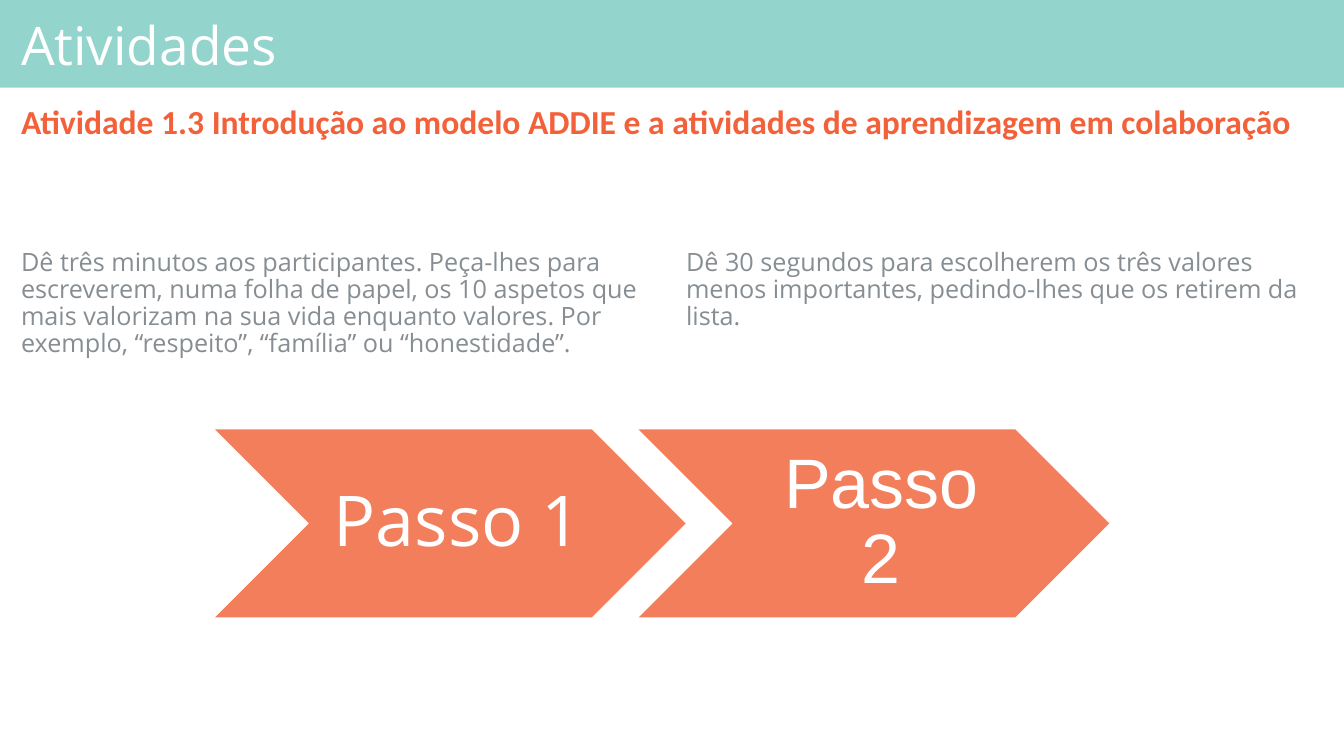
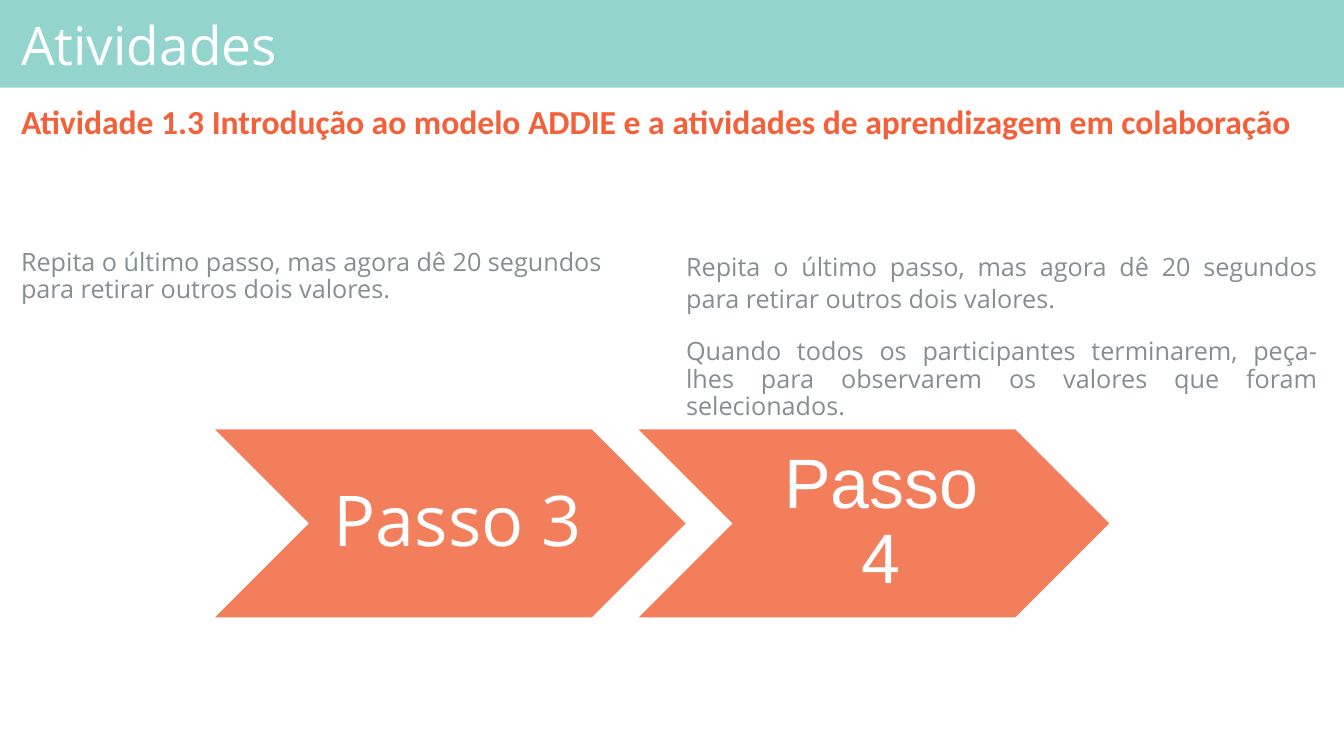
from pptx import Presentation
from pptx.dml.color import RGBColor
from pptx.enum import shapes, text
from pptx.oxml.ns import qn
from pptx.util import Cm, Pt

COLORS = {"band": "93D4CC", "heading": "F2613A", "body": "868E93",
          "step": "F27E5C", "white": "FFFFFF"}
LEFT, JUSTIFY, CENTER = text.PP_ALIGN.LEFT, text.PP_ALIGN.JUSTIFY, text.PP_ALIGN.CENTER

TITLE = "Atividades"
HEADING = "Atividade 1.3 Introdução ao modelo ADDIE e a atividades de aprendizagem em colaboração"
REPEAT = "Repita o último passo, mas agora dê 20 segundos para retirar outros dois valores."

# Per page: two columns of (text, alignment, line spacing, space before), then step labels
PAGES = [
    ([[("Dê três minutos aos participantes. Peça-lhes para escreverem, numa folha de papel, "
        "os 10 aspetos que mais valorizam na sua vida enquanto valores. Por exemplo, "
        "“respeito”, “família” ou “honestidade”.", LEFT, 0.9, 0)],
      [("Dê 30 segundos para escolherem os três valores menos importantes, pedindo-lhes que "
        "os retirem da lista.", LEFT, 0.9, 0)]],
     ["Passo 1", "Passo 2"]),
    ([[(REPEAT, LEFT, 0.9, 0)],
      [(REPEAT, JUSTIFY, 1.07, 0),
       ("Quando todos os participantes terminarem, peça-lhes para observarem os valores que "
        "foram selecionados.", JUSTIFY, 0.9, 18)]],
     ["Passo 3", "Passo 4"]),
]


def fill_shape(shape, color):
    shape.shadow.inherit = False
    shape.fill.solid()
    shape.fill.fore_color.rgb = RGBColor.from_string(COLORS[color])
    shape.line.fill.background()


def write(box, paragraphs, font, size, color, anchor, insets, bold=False):
    frame = box.text_frame
    frame.word_wrap = True
    frame.auto_size = text.MSO_AUTO_SIZE.NONE
    frame.vertical_anchor = anchor
    frame.margin_left, frame.margin_top, frame.margin_right, frame.margin_bottom = map(Cm, insets)
    for index, (words, align, spacing, before) in enumerate(paragraphs):
        para = frame.paragraphs[0] if index == 0 else frame.add_paragraph()
        para.alignment = align
        para.line_spacing = spacing
        para.space_before = Pt(before)
        properties = para._p.get_or_add_pPr()
        properties.set("marL", "0")
        properties.set("indent", "0")
        properties.append(properties.makeelement(qn("a:buNone"), {}))
        span = para.add_run()
        span.text = words
        span.font.name = font
        span.font.size = Pt(size)
        span.font.bold = bold
        span.font.color.rgb = RGBColor.from_string(COLORS[color])


deck = Presentation()
deck.slide_width, deck.slide_height = Cm(33.87), Cm(19.05)

# Shared layout: title, heading and two columns
layout = deck.slide_layouts.get_by_name("Comparison")
places = {0: (0.28, 0.23, 33.17, 1.98), 1: (0.28, 2.36, 33.17, 1.52),
          2: (0.28, 6.15, 16.41, 12.67), 4: (17.04, 6.15, 16.41, 12.67)}
for holder in list(layout.placeholders):
    place = places.get(holder.placeholder_format.idx)
    if place:
        holder.left, holder.top, holder.width, holder.height = map(Cm, place)
    else:
        layout.shapes.element.remove(holder.element)

pages = [deck.slides.add_slide(layout) for _ in PAGES]

# Title band, moved behind everything on the layout
band = pages[0].shapes.add_shape(shapes.MSO_SHAPE.RECTANGLE, 0, 0, deck.slide_width, Cm(2.21))
fill_shape(band, "band")
layout.shapes.element.insert(2, band.element)

STEP_WIDTH, STEP_HEIGHT = 11.86, 4.74
STEP_FONTS = ["Open Sans", "Arial"]
BODY_INSETS = (0.25, 0.13, 0.25, 0.13)
TOP, MIDDLE = text.MSO_ANCHOR.TOP, text.MSO_ANCHOR.MIDDLE

for page, (columns, steps) in zip(pages, PAGES):
    # Title and heading
    holders = {holder.placeholder_format.idx: holder for holder in page.placeholders}
    write(holders[0], [(TITLE, LEFT, 0.9, 0)], "Open Sans", 38, "white", MIDDLE,
          (0.25, 0.15, 0.15, 0.15))
    write(holders[1], [(HEADING, JUSTIFY, 0.9, 0)], "Calibri", 24, "heading", MIDDLE,
          BODY_INSETS, bold=True)

    # Instructions
    for idx, column in zip((2, 4), columns):
        write(holders[idx], column, "Open Sans", 18, "body", TOP, BODY_INSETS)

    # Step chevrons, each overlapping the last by a tenth
    for number, (label, font) in enumerate(zip(steps, STEP_FONTS)):
        chevron = page.shapes.add_shape(
            shapes.MSO_SHAPE.CHEVRON, Cm(5.42 + number * STEP_WIDTH * 0.9), Cm(10.82),
            Cm(STEP_WIDTH), Cm(STEP_HEIGHT))
        fill_shape(chevron, "step")
        write(chevron, [(label, CENTER, 0.9, 0)], font, 50, "white", MIDDLE,
              (0.57, 0.18, 0.19, 0.18))

deck.save("out.pptx")
